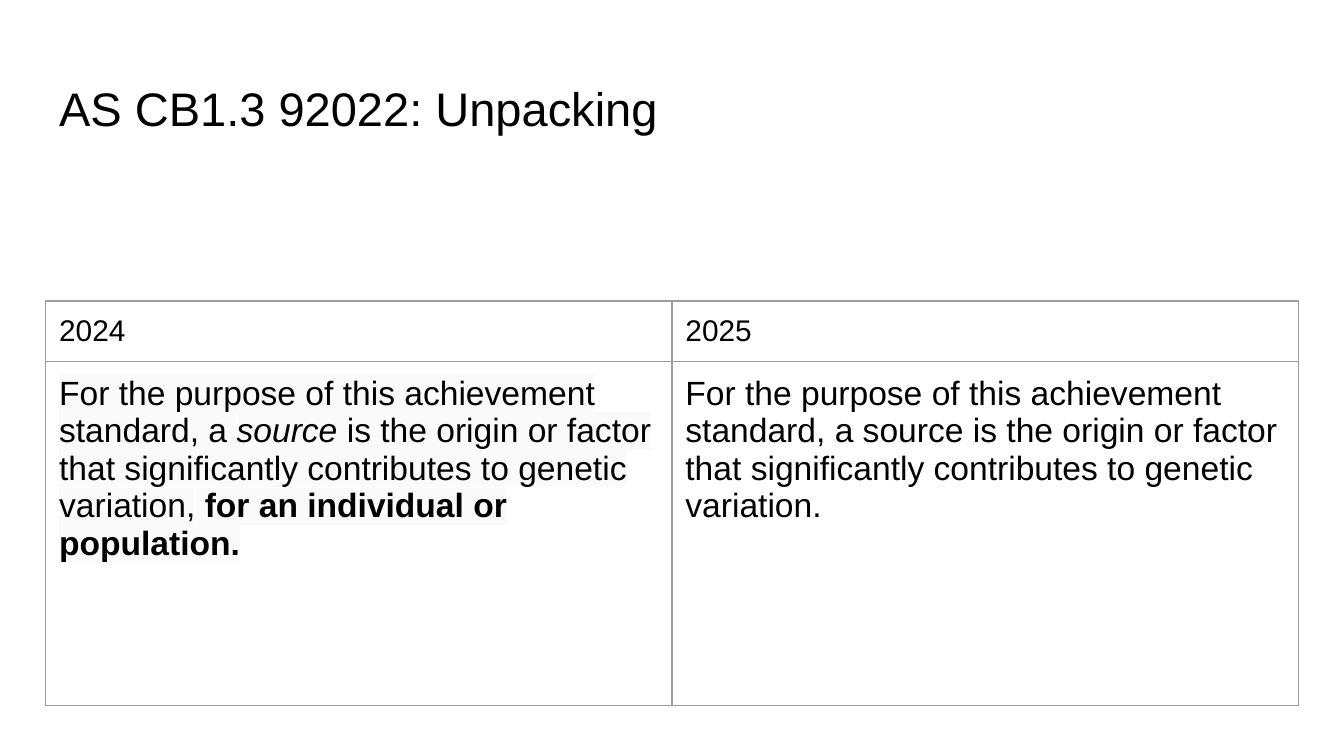
"""Build a slide that compares the 2024 and 2025 wording of a standard."""
from lxml.etree import SubElement
from pptx import Presentation
from pptx.dml.color import RGBColor
from pptx.enum.text import MSO_ANCHOR as Anchor, PP_ALIGN as Align
from pptx.oxml import parse_xml
from pptx.oxml.ns import nsdecls, qn
from pptx.util import Inches, Pt


def color(value):
    return RGBColor.from_string(value)


class SlideBuilder:
    font = "Arial"
    ink = "000000"
    border = "9E9E9E"
    inset = Inches(0.1)

    def __init__(self, slide):
        self.slide = slide

    def format_run(self, run, size, bold=False, italic=False, highlight=None):
        font = run.font
        font.name, font.size = self.font, Pt(size)
        font.bold, font.italic = bold, italic
        font.color.rgb = color(self.ink)
        if highlight:
            latin = run._r.rPr.find(qn("a:latin"))
            latin.addprevious(parse_xml(
                f'<a:highlight {nsdecls("a")}><a:srgbClr val="{highlight}"/></a:highlight>'))

    def set_insets(self, target):
        target.margin_left = target.margin_right = self.inset
        target.margin_top = target.margin_bottom = self.inset

    def title(self, text, left, top, width, height, size):
        shape = self.slide.shapes.title
        shape.left, shape.top = Inches(left), Inches(top)
        shape.width, shape.height = Inches(width), Inches(height)
        frame = shape.text_frame
        frame.text = text
        frame.word_wrap = True
        frame.vertical_anchor = Anchor.MIDDLE
        self.set_insets(frame)
        paragraph = frame.paragraphs[0]
        paragraph.alignment = Align.LEFT
        self.format_run(paragraph.runs[0], size)

    def cell(self, cell, pieces):
        self.set_insets(cell)
        cell.vertical_anchor = Anchor.TOP
        paragraph = cell.text_frame.paragraphs[0]
        for text, style in pieces:
            run = paragraph.add_run()
            run.text = text
            self.format_run(run, **style)
        properties = cell._tc.get_or_add_tcPr()
        for side in ("lnL", "lnR", "lnT", "lnB"):
            line = SubElement(properties, qn(f"a:{side}"), w=str(Pt(0.75)))
            fill = SubElement(line, qn("a:solidFill"))
            SubElement(fill, qn("a:srgbClr"), val=self.border)
        cell.fill.background()

    def table(self, rows, left, top, column_width, row_heights):
        columns = len(rows[0])
        table = self.slide.shapes.add_table(
            len(rows), columns, Inches(left), Inches(top),
            Inches(column_width * columns), Inches(sum(row_heights))).table
        table.first_row = table.horz_banding = False
        for column in table.columns:
            column.width = Inches(column_width)
        for row, height, contents in zip(table.rows, row_heights, rows):
            row.height = Inches(height)
            for cell, pieces in zip(row.cells, contents):
                self.cell(cell, pieces)


def main():
    presentation = Presentation()
    presentation.slide_width = Inches(10)
    presentation.slide_height = Inches(10) * 9 // 16
    builder = SlideBuilder(presentation.slides.add_slide(presentation.slide_layouts[5]))
    builder.title("AS CB1.3 92022: Unpacking", 0.34, 0.49, 9.32, 0.63, 25.2)

    heading = {"size": 16}
    body = {"size": 18}
    marked = {**body, "highlight": "FAFAFA"}
    earlier = [
        ("For the purpose of this achievement standard, a ", marked),
        ("source ", {**marked, "italic": True}),
        ("is the origin or factor that significantly contributes to genetic variation,", marked),
        (" for an individual or population.", {**marked, "bold": True}),
    ]
    later = [("For the purpose of this achievement standard, a source is the origin or factor "
              "that significantly contributes to genetic variation.", body)]
    builder.table([[[("2024", heading)], [("2025", heading)]], [earlier, later]],
                  0.34, 2.24, 4.66, [0.41, 2.56])
    presentation.save("out.pptx")


if __name__ == "__main__":
    main()
